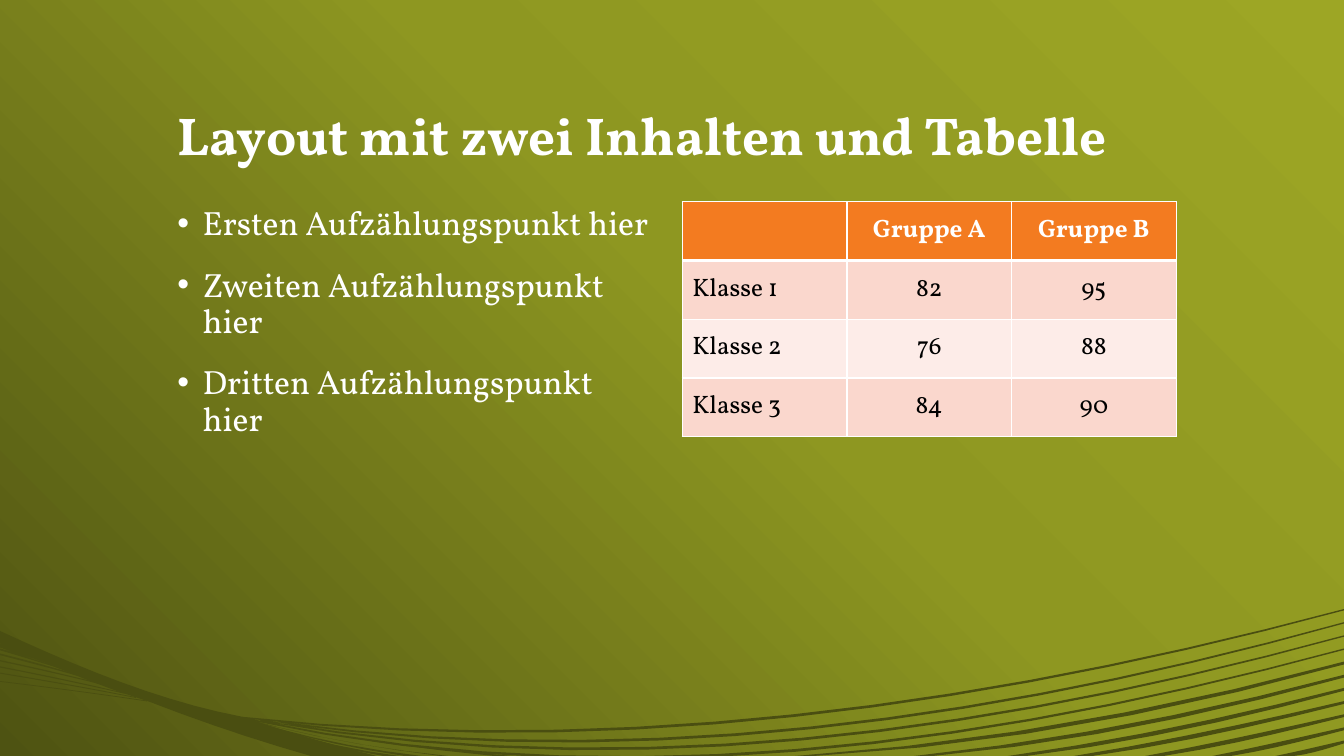
from copy import deepcopy

from pptx import Presentation
from pptx.dml.color import RGBColor
from pptx.enum.text import MSO_ANCHOR as ANC, MSO_AUTO_SIZE as AUTO, PP_ALIGN as AL
from pptx.oxml import parse_xml
from pptx.oxml.ns import nsdecls, qn
from pptx.util import Pt

FONT = "Vollkorn"


def rgb(hex_str):
    return RGBColor.from_string(hex_str)


def arc(x0, y0, x1, y1, rise1, rise2, steps=5):
    pts = []
    for i in range(steps + 1):
        t = i / steps
        x = x0 + (x1 - x0) * t
        y = (y0 * (1 - t) ** 3 + 3 * (y0 + rise1) * t * (1 - t) ** 2
             + 3 * (y0 + rise2) * t ** 2 * (1 - t) + y1 * t ** 3)
        pts.append((Pt(x), Pt(y)))
    return pts


prs = Presentation()
prs.slide_width, prs.slide_height = Pt(960), Pt(540)
s = prs.slides.add_slide(prs.slide_layouts[1])
title, body = s.shapes.title, s.placeholders[1]

bg = s.background.fill
bg.gradient()
bg.gradient_angle = 225
stops = s.element.find(".//" + qn("a:gsLst"))
stops.append(deepcopy(stops[0]))
for stop, (pos, color) in zip(bg.gradient_stops, [(0, "9DA625"), (0.45, "8E9721"), (1, "4E5312")]):
    stop.position = pos
    stop.color.rgb = rgb(color)

strands, fan = [], []
for i, (x, y) in enumerate([(173, 512), (199, 515.5), (186, 514), (176, 513)]):
    top = 435 + 9.4 * i
    strands.append((arc(960, top, x, y, 70, 105, 14),
                    arc(960, top + 1, x, y + 1, 71, 106.5, 14)))
for i, x in enumerate([568, 653, 720, 767, 818, 866, 911]):
    top = 435 + 9.4 * (i + 4)
    drop = 540 - top
    bend = 0.005 * (6 - i) ** 2
    rise1, rise2 = drop * (0.34 + bend), drop * (0.69 + bend)
    strands.append((arc(960, top, x, 540, rise1, rise2),
                    arc(960, top + 2, x + 13, 540, rise1, rise2)))
for left, right in [(353, 366), (315, 320), (289, 301), (274, 285)]:
    fan.append((arc(170, 512, right, 540, 14, 23), arc(165, 511, left, 540, 14, 23)))
for y, thick, x, end in [(486.5, 0.5, 105, 500.5), (480.5, 0.7, 97, 498), (476, 0.8, 89, 495),
                         (471.5, 0.9, 77, 489.5), (466.8, 1.2, 69, 486),
                         (463.2, 1.3, 63, 483.5), (459.5, 3, 40, 475)]:
    drop = end - y
    fan.append((arc(0, y, x, end, drop * 0.3, drop * 0.63),
                arc(0, y + thick, x, end + 0.5, drop * 0.3, drop * 0.63)))
swell = [(arc(0, 450.7, 173, 512, 26.7, 50.4, 10), arc(0, 459.5, 106, 501, 15, 31)),
         (arc(173, 512, 269, 540, 11, 20), arc(106, 501, 222, 540, 15, 28))]

for wave in (strands, fan, swell):
    outlines = [upper + lower[::-1] for upper, lower in wave]
    fb = s.shapes.build_freeform(*outlines[0][0])
    fb.add_line_segments(outlines[0][1:], close=True)
    for outline in outlines[1:]:
        fb.move_to(*outline[0])
        fb.add_line_segments(outline[1:], close=True)
    sp = fb.convert_to_shape()
    sp.shadow.inherit = False
    sp.fill.solid()
    sp.fill.fore_color.rgb = rgb("4A4E11")
    sp.line.fill.background()
    title.element.addprevious(sp.element)

title.left, title.top, title.width, title.height = Pt(119.5), Pt(31.7), Pt(720), Pt(91.4)
body.left, body.top, body.width, body.height = Pt(119.5), Pt(144), Pt(352.8), Pt(329.8)

tf = title.text_frame
tf.word_wrap, tf.auto_size, tf.vertical_anchor = True, AUTO.NONE, ANC.BOTTOM
p = tf.paragraphs[0]
p.alignment, p.line_spacing = AL.LEFT, 0.9
r = p.add_run()
r.text = "Layout mit zwei Inhalten und Tabelle"
r.font.name, r.font.size, r.font.bold = FONT, Pt(38), True
r.font.color.rgb = rgb("FFFFFF")

tf = body.text_frame
tf.word_wrap, tf.auto_size, tf.vertical_anchor = True, AUTO.NONE, ANC.TOP
for i, ordinal in enumerate(["Ersten", "Zweiten", "Dritten"]):
    p = tf.add_paragraph() if i else tf.paragraphs[0]
    pPr = p._p.get_or_add_pPr()
    pPr.set("marL", str(Pt(18)))
    pPr.set("indent", str(-Pt(18)))
    for bullet in ('<a:buClr {}><a:srgbClr val="FFFFFF"/></a:buClr>',
                   '<a:buFont {} typeface="Arial"/>', '<a:buChar {} char="•"/>'):
        pPr.append(parse_xml(bullet.format(nsdecls("a"))))
    p.line_spacing, p.space_before = 0.9, Pt(18 if i else 0)
    r = p.add_run()
    r.text = f"{ordinal} Aufzählungspunkt hier"
    r.font.name, r.font.size = FONT, Pt(24)
    r.font.color.rgb = rgb("FFFFFF")

rows = [["", "Gruppe A", "Gruppe B"], ["Klasse 1", "82", "95"],
        ["Klasse 2", "76", "88"], ["Klasse 3", "84", "90"]]
fills = ["F37B20", "FAD7CD", "FDECE8", "FAD7CD"]
tbl = s.shapes.add_table(4, 3, Pt(487.4), Pt(144), Pt(352.8), Pt(168)).table
tbl.horz_banding = False
for col in tbl.columns:
    col.width = Pt(117.6)
for i, row in enumerate(rows):
    tbl.rows[i].height = Pt(42)
    for j, text in enumerate(row):
        cell = tbl.cell(i, j)
        cell.vertical_anchor = ANC.MIDDLE
        tcPr = cell._tc.get_or_add_tcPr()
        for side in "LRTB":
            width = 3 if (i, side) in [(0, "B"), (1, "T")] else 1
            tcPr.append(parse_xml(
                f'<a:ln{side} {nsdecls("a")} w="{Pt(width)}"><a:solidFill>'
                f'<a:srgbClr val="FFFFFF"/></a:solidFill></a:ln{side}>'))
        cell.fill.solid()
        cell.fill.fore_color.rgb = rgb(fills[i])
        if text:
            p = cell.text_frame.paragraphs[0]
            p.alignment = AL.CENTER if j else AL.LEFT
            r = p.add_run()
            r.text = text
            r.font.name, r.font.size, r.font.bold = FONT, Pt(18), i == 0
            r.font.color.rgb = rgb("000000" if i else "FFFFFF")

prs.save("out.pptx")
